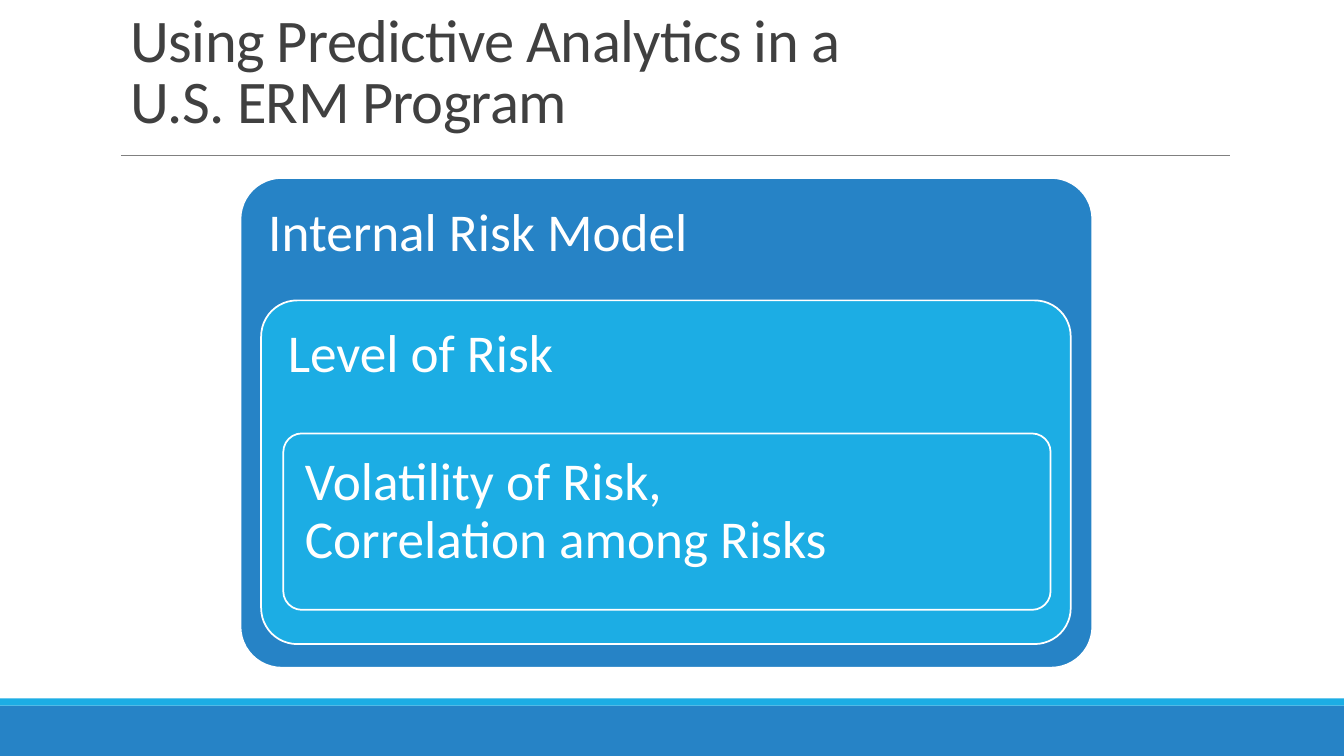
"""Builds the slide of nested risk model boxes."""
from pptx import Presentation
from pptx.dml.color import RGBColor
from pptx.enum.shapes import MSO_CONNECTOR, MSO_SHAPE
from pptx.enum.text import MSO_ANCHOR, PP_ALIGN
from pptx.oxml import parse_xml
from pptx.util import Inches, Pt

RECT, ROUND = MSO_SHAPE.RECTANGLE, MSO_SHAPE.ROUNDED_RECTANGLE
STRAIGHT = MSO_CONNECTOR.STRAIGHT
TOP, BOTTOM, LEFT = MSO_ANCHOR.TOP, MSO_ANCHOR.BOTTOM, PP_ALIGN.LEFT

BLUE, CYAN, WHITE, DARK, GREY = "2683C6", "1CADE4", "FFFFFF", "404040", "808080"
FONT = "Calibri"
WIDTH, HEIGHT = 13.33, 7.5
TITLE = "Using Predictive Analytics in a\nU.S. ERM Program"
BARS = [(7, 0.5, BLUE), (6.93, 0.07, CYAN)]
BOXES = [
    ("Internal Risk Model", (2.38, 1.76, 8.46, 4.87), 0.085, BLUE, 2),
    ("Level of Risk", (2.59, 2.98, 8.03, 3.41), 0.105, CYAN, 1.25),
    ("Volatility of Risk,\nCorrelation among Risks", (2.81, 4.3, 7.61, 1.75), 0.105, CYAN, 1.25),
]


def rgb(color):
    return RGBColor.from_string(color)


def add_block(s, kind, box, fill):
    sp = s.shapes.add_shape(kind, *map(Inches, box))
    sp.shadow.inherit = False
    sp.fill.solid()
    sp.fill.fore_color.rgb = rgb(fill)
    sp.line.fill.background()
    return sp


def write(tf, text, size, color, spacing, anchor):
    tf.word_wrap = True
    tf.vertical_anchor = anchor
    p = tf.paragraphs[0]
    p.text = text
    p.alignment = LEFT
    p.line_spacing = spacing
    p.font.name = FONT
    p.font.size = Pt(size)
    p.font.color.rgb = rgb(color)
    return p


def add_title(s):
    tf = s.shapes.add_textbox(*map(Inches, (1.2, 0.34, 11, 1.06))).text_frame
    p = write(tf, TITLE, 43.2, DARK, 0.85, BOTTOM)
    for r in p.runs:
        r.font._element.set("spc", "-50")


def add_rule(s):
    line = s.shapes.add_connector(STRAIGHT, *map(Inches, (1.2, 1.54, 12.2, 1.54)))
    line.line.color.rgb = rgb(GREY)
    line.line.width = Pt(0.5)
    line._element.spPr.append(parse_xml(
        '<a:effectLst xmlns:a="http://schemas.openxmlformats.org/drawingml/2006/main"/>'))


def add_risk_box(s, text, box, corner, fill, border):
    sp = add_block(s, ROUND, box, fill)
    sp.adjustments[0] = corner
    sp.line.color.rgb = rgb(WHITE)
    sp.line.width = Pt(border)
    tf = sp.text_frame
    tf.margin_left = tf.margin_right = tf.margin_top = tf.margin_bottom = Inches(0.16)
    write(tf, text, 38, WHITE, 0.9, TOP)


def main():
    prs = Presentation()
    prs.slide_width, prs.slide_height = Inches(WIDTH), Inches(HEIGHT)
    s = prs.slides.add_slide(prs.slide_layouts[6])
    for top, height, fill in BARS:
        add_block(s, RECT, (0, top, WIDTH, height), fill)
    add_rule(s)
    add_title(s)
    for box in BOXES:
        add_risk_box(s, *box)
    prs.save("out.pptx")


if __name__ == "__main__":
    main()
